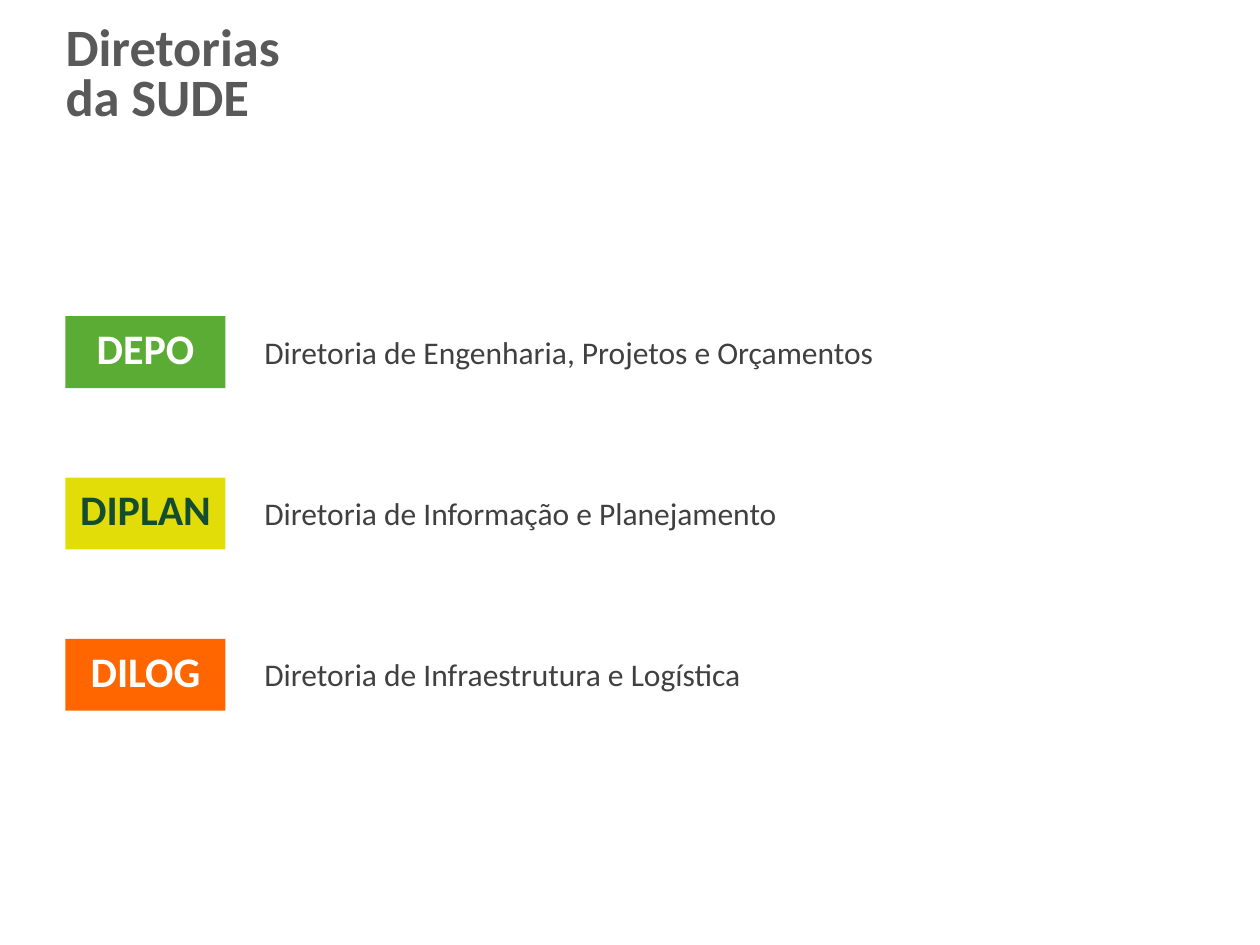
from pptx import Presentation
from pptx import util as u
from pptx.dml.color import RGBColor
from pptx.enum import shapes, text

COLORS = {
    "title": "595959", "body": "404040", "white": "FFFFFF",
    "green": "5BAC35", "yellow": "E2DD09", "orange": "FF6600",
    "dark_green": "134C30",
}

# Tag, description, tag fill, tag text colour
DIRECTORATES = [
    ("DEPO", "Diretoria de Engenharia, Projetos e Orçamentos", "green", "white"),
    ("DIPLAN", "Diretoria de Informação e Planejamento", "yellow", "dark_green"),
    ("DILOG", "Diretoria de Infraestrutura e Logística", "orange", "white"),
]

# Percent of the slide's width (left, width) and height (top, step)
TAG_LEFT, TAG_WIDTH = 5.2, 12.7
NAME_LEFT, NAME_WIDTH = 20, 52.7
FIRST_TOP, ROW_STEP = 33.47, 17.07


class SlideBuilder:
    font = "Calibri"

    def __init__(self, deck):
        self.deck = deck
        self.page = deck.slides.add_slide(deck.slide_layouts[5])

    def area(self, left, top, width, height):
        """Turn percentages of the slide into lengths."""
        across, down = self.deck.slide_width / 100, self.deck.slide_height / 100
        return [u.Emu(round(n)) for n in
                (left * across, top * down, width * across, height * down)]

    def add_span(self, para, words, size, color, bold=False):
        span = para.add_run()
        span.text = words
        span.font.name = self.font
        span.font.size = u.Pt(size)
        span.font.bold = bold
        span.font.color.rgb = RGBColor.from_string(COLORS[color])

    def title(self, lines, *area):
        box = self.page.shapes.title
        box.left, box.top, box.width, box.height = self.area(*area)
        frame = box.text_frame
        frame.auto_size = text.MSO_AUTO_SIZE.NONE
        frame.vertical_anchor = text.MSO_ANCHOR.MIDDLE
        para = frame.paragraphs[0]
        para.alignment = text.PP_ALIGN.LEFT
        para.line_spacing = 0.8
        for index, line in enumerate(lines):
            if index:
                para.add_line_break()
            self.add_span(para, line, 30, "title", bold=True)

    def block(self, group, fill, *area):
        shape = group.shapes.add_shape(shapes.MSO_SHAPE.RECTANGLE, *self.area(*area))
        shape.shadow.inherit = False
        shape.fill.solid()
        shape.fill.fore_color.rgb = RGBColor.from_string(COLORS[fill])
        shape.line.fill.background()

    def label(self, group, words, size, color, align, bold, *area):
        box = group.shapes.add_textbox(*self.area(*area))
        box.text_frame.word_wrap = True
        box.text_frame.auto_size = text.MSO_AUTO_SIZE.SHAPE_TO_FIT_TEXT
        para = box.text_frame.paragraphs[0]
        para.alignment = align
        self.add_span(para, words, size, color, bold)

    def directorate(self, top, tag, name, fill, tag_color):
        group = self.page.shapes.add_group_shape()
        self.label(group, name, 18, "body", text.PP_ALIGN.LEFT, False,
                   NAME_LEFT, top + 1.07, NAME_WIDTH, 5.33)
        self.block(group, fill, TAG_LEFT, top, TAG_WIDTH, 7.6)
        self.label(group, tag, 24, tag_color, text.PP_ALIGN.CENTER, True,
                   TAG_LEFT, top, TAG_WIDTH, 6.67)


def main():
    deck = Presentation()
    deck.slide_width, deck.slide_height = u.Inches(10), u.Inches(7.5)
    slide = SlideBuilder(deck)

    # Heading
    slide.title(["Diretorias", "da SUDE"], 4.2, 1.47, 30.9, 13.2)

    # One row per directorate
    for row, directorate in enumerate(DIRECTORATES):
        slide.directorate(FIRST_TOP + row * ROW_STEP, *directorate)

    deck.save("out.pptx")


if __name__ == "__main__":
    main()
